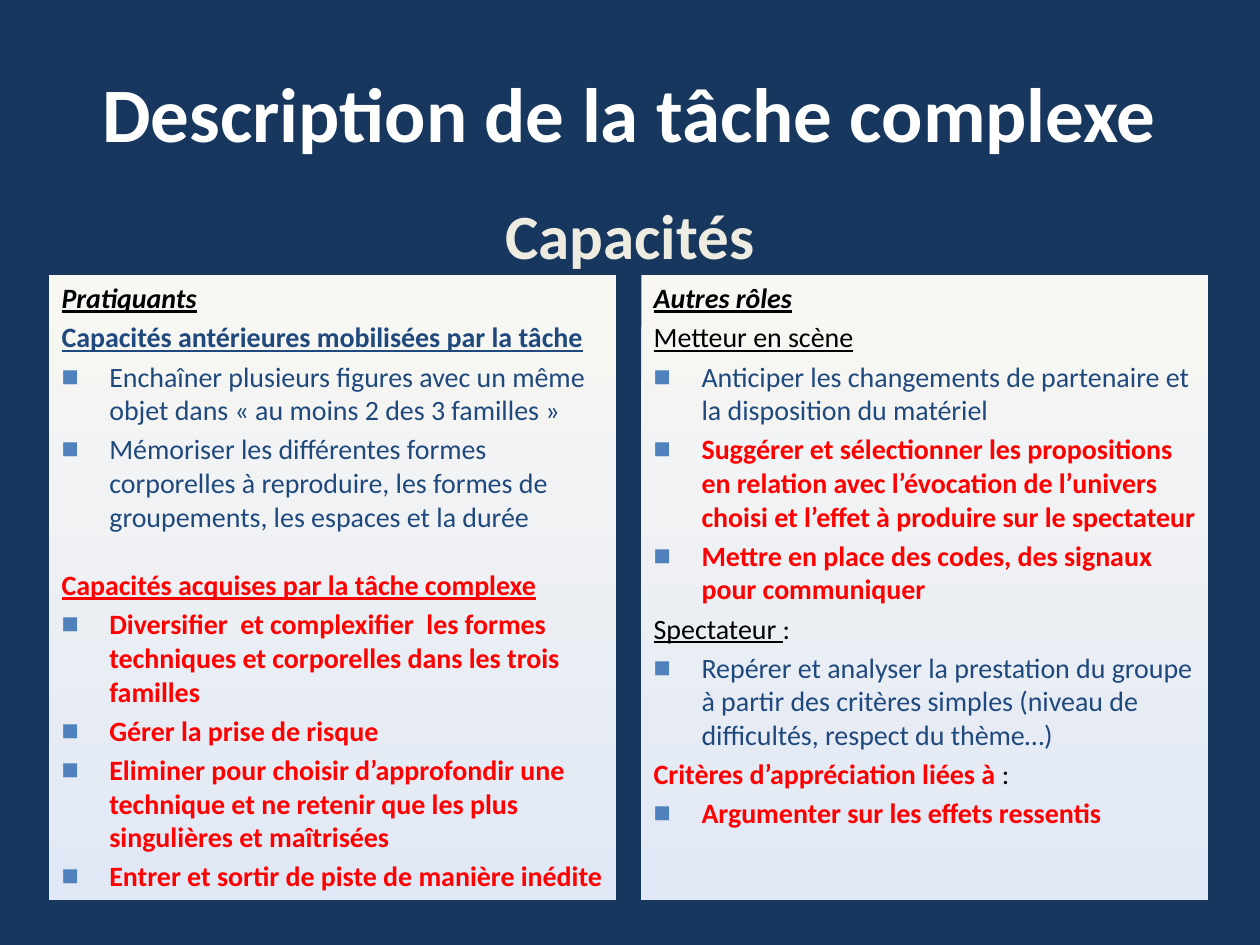
from lxml import etree
from pptx import Presentation
from pptx.dml.color import RGBColor
from pptx.enum.shapes import MSO_SHAPE
from pptx.enum.text import MSO_ANCHOR, PP_ALIGN
from pptx.oxml.ns import qn
from pptx.util import Inches, Pt

RECT = MSO_SHAPE.RECTANGLE
TOP, MIDDLE = MSO_ANCHOR.TOP, MSO_ANCHOR.MIDDLE
LEFT, CENTER = PP_ALIGN.LEFT, PP_ALIGN.CENTER

NAVY = RGBColor(0x17, 0x37, 0x5E)
WHITE = RGBColor(0xFF, 0xFF, 0xFF)
CREAM = RGBColor(0xEE, 0xEC, 0xE1)
BLACK = RGBColor(0, 0, 0)
BLUE = RGBColor(0x1F, 0x49, 0x7D)
RED = RGBColor(0xFF, 0, 0)
PANEL_TOP = RGBColor(0xF8, 0xF7, 0xF3)
PANEL_BOTTOM = RGBColor(0xE1, 0xE8, 0xF5)
BULLET = "4F81BD"
FONT = "Calibri"

# Content: each panel line is (kind, text, run format[, tail])
TITLE = "Description de la tâche complexe"
SUBTITLE = "Capacités"
PANEL_HEAD = dict(color=BLACK, bold=True, italic=True, underline=True)
ROLE = dict(color=BLACK, underline=True)
KNOWN = dict(color=BLUE)
NEW = dict(color=RED, bold=True)

PRACTITIONERS = [
    ("head", "Pratiquants", PANEL_HEAD),
    ("head", "Capacités antérieures mobilisées par la tâche",
     dict(color=BLUE, bold=True, underline=True)),
    ("item", "Enchaîner plusieurs figures avec un même objet dans "
             "« au moins 2 des 3 familles »", KNOWN),
    ("item", "Mémoriser les différentes formes corporelles à reproduire, "
             "les formes de groupements, les espaces et la durée", KNOWN),
    ("section", "Capacités acquises par la tâche complexe",
     dict(color=RED, underline=True, bold=False)),
    ("item", "Diversifier  et complexifier  les formes techniques et "
             "corporelles dans les trois familles", NEW),
    ("item", "Gérer la prise de risque", NEW),
    ("item", "Eliminer pour choisir d’approfondir une technique et ne retenir "
             "que les plus singulières et maîtrisées", NEW),
    ("item", "Entrer et sortir de piste de manière inédite", NEW),
]
PRACTITIONERS[4][2]["bold"] = True
OTHER_ROLES = [
    ("head", "Autres rôles", PANEL_HEAD),
    ("head", "Metteur en scène", ROLE),
    ("item", "Anticiper les changements de partenaire et la disposition "
             "du matériel", KNOWN),
    ("item", "Suggérer et sélectionner les propositions en relation avec "
             "l’évocation de l’univers choisi et l’effet à produire sur le "
             "spectateur", NEW),
    ("item", "Mettre en place des codes, des signaux pour communiquer", NEW),
    ("head", "Spectateur ", ROLE, ":"),
    ("item", "Repérer et analyser la prestation du groupe à partir des critères "
             "simples (niveau de difficultés, respect du thème…)", KNOWN),
    ("head", "Critères d’appréciation liées à ", NEW, ":"),
    ("item", "Argumenter sur les effets ressentis", NEW),
]

# Layout
PANEL_X, PANEL_Y, PANEL_W, PANEL_H, PANEL_GAP = 0.39, 2.18, 4.5, 4.96, 0.2
SPACE_BEFORE = {"head": 3.2, "item": 3.2, "section": 20}


def add_text(p, text, size=16, color=BLACK, bold=False, italic=False,
             underline=False):
    r = p.add_run()
    r.text = text
    f = r.font
    f.name, f.size, f.color.rgb = FONT, Pt(size), color
    f.bold, f.italic, f.underline = bold, italic, underline


def set_bullet(p, shown):
    pPr = p._p.get_or_add_pPr()
    indent = Inches(0.38) if shown else 0
    pPr.set("marL", str(indent))
    pPr.set("indent", str(-indent))
    if not shown:
        etree.SubElement(pPr, qn("a:buNone"))
        return
    clr = etree.SubElement(pPr, qn("a:buClr"))
    etree.SubElement(clr, qn("a:srgbClr"), val=BULLET)
    etree.SubElement(pPr, qn("a:buSzPct"), val="65000")
    etree.SubElement(pPr, qn("a:buFont"), typeface=FONT)
    etree.SubElement(pPr, qn("a:buChar"), char="■")


def fill_placeholder(sp, box, text, anchor, **fmt):
    sp.left, sp.top, sp.width, sp.height = map(Inches, box)
    tf = sp.text_frame
    tf.vertical_anchor = anchor
    p = tf.paragraphs[0]
    p.alignment = CENTER
    p.space_before = Pt(0)
    set_bullet(p, False)
    add_text(p, text, bold=True, **fmt)


def add_panel(s, x, lines):
    sp = s.shapes.add_shape(RECT, Inches(x), Inches(PANEL_Y),
                            Inches(PANEL_W), Inches(PANEL_H))
    sp.shadow.inherit = False
    sp.line.fill.background()
    sp.fill.gradient()
    sp.fill.gradient_angle = 270
    for stop, color in zip(sp.fill.gradient_stops, (PANEL_TOP, PANEL_BOTTOM)):
        stop.color.rgb = color
    tf = sp.text_frame
    tf.word_wrap = True
    tf.vertical_anchor = TOP
    for i, (kind, text, fmt, *tail) in enumerate(lines):
        p = tf.add_paragraph() if i else tf.paragraphs[0]
        p.alignment = LEFT
        p.space_before = Pt(SPACE_BEFORE[kind] if i else 0)
        set_bullet(p, kind == "item")
        add_text(p, text, **fmt)
        for extra in tail:
            add_text(p, extra)


prs = Presentation()
prs.slide_width, prs.slide_height = Inches(10), Inches(7.5)
s = prs.slides.add_slide(prs.slide_layouts[1])
s.background.fill.solid()
s.background.fill.fore_color.rgb = NAVY

# Title and subtitle
fill_placeholder(s.shapes.title, (0.5, 0.26, 9, 1.25), TITLE, MIDDLE,
                 size=44, color=WHITE)
fill_placeholder(s.placeholders[1], (0.5, 1.51, 9, 0.61), SUBTITLE, TOP,
                 size=36, color=CREAM)

# Two panels side by side
for col, lines in enumerate((PRACTITIONERS, OTHER_ROLES)):
    add_panel(s, PANEL_X + col * (PANEL_W + PANEL_GAP), lines)

prs.save("out.pptx")
